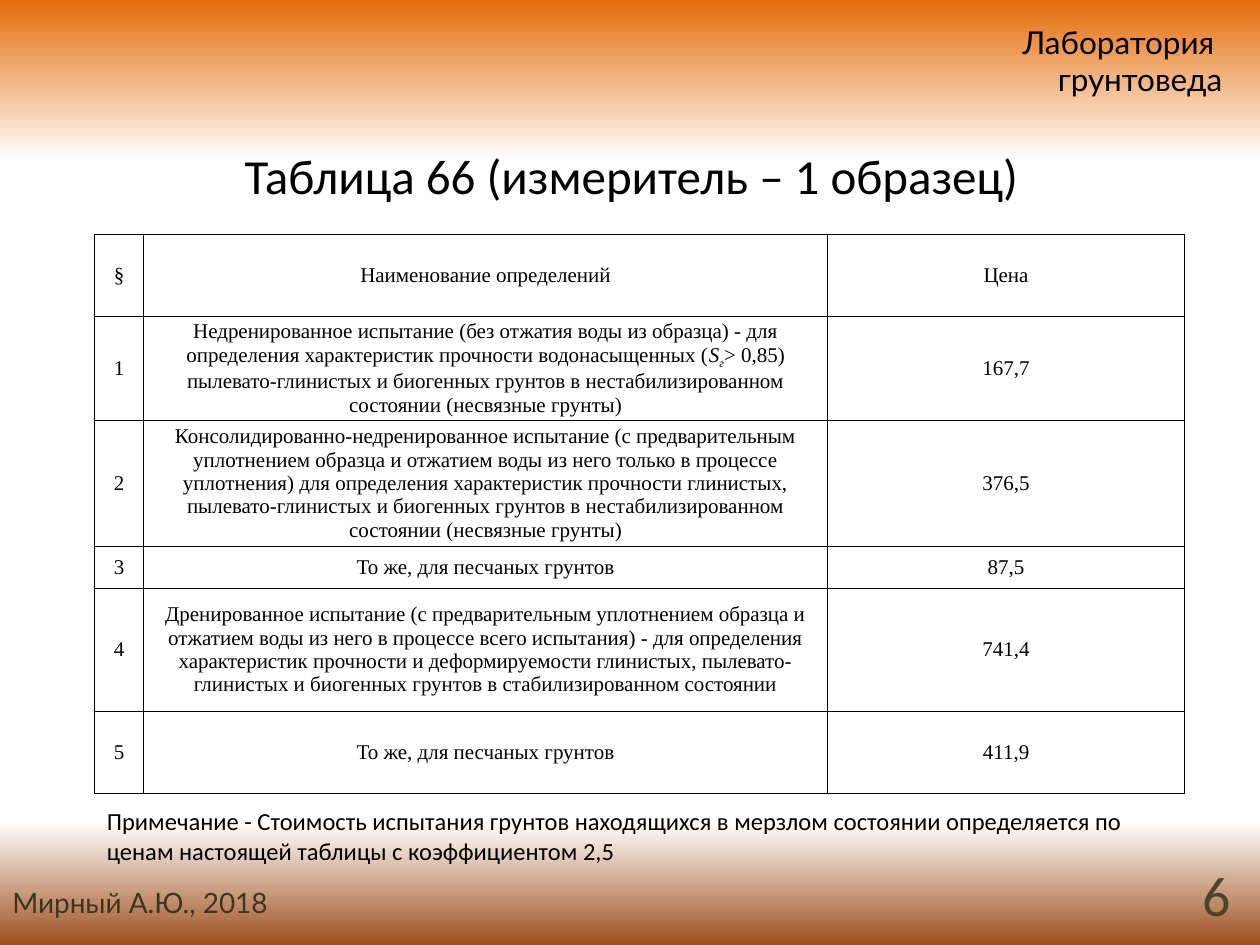
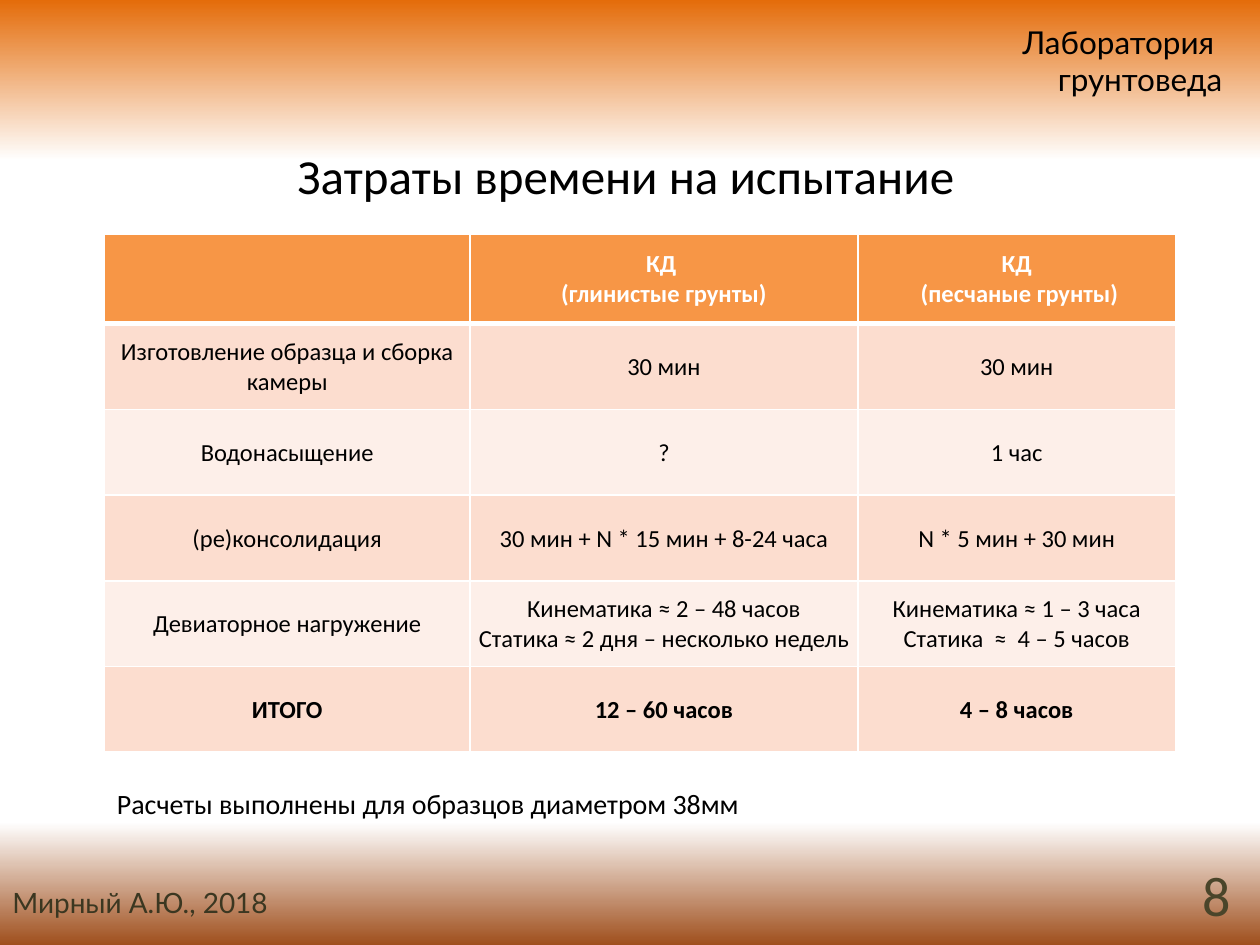
import pptx
import pptx.dml.color
import pptx.enum.text
import pptx.oxml
import pptx.oxml.ns
import pptx.util
from dataclasses import dataclass
from typing import NamedTuple

Inches = pptx.util.Inches
Pt = pptx.util.Pt
qn = pptx.oxml.ns.qn
ALIGN = pptx.enum.text.PP_ALIGN
ANCHOR = pptx.enum.text.MSO_ANCHOR

BLACK, WHITE = "000000", "FFFFFF"
ORANGE, PEACH, PALE_PEACH = "F79646", "FCDDCF", "FDEFE9"
FOOTER, PAGE_NUMBER = "3B3721", "4A452A"
# Position %, colour, opacity %
BACKDROP = [(0, "E46C0A", 77), (17, WHITE, 100), (87, WHITE, 100), (100, "9F4F1D", 50)]


class Run(NamedTuple):
    text: str
    italic: bool = False
    baseline: int = 0


class Box(NamedTuple):
    left: float
    top: float
    width: float
    height: float


@dataclass
class RowStyle:
    fill: str
    color: str = BLACK
    bold: bool = False
    bottom: float = 1
    margins: tuple = (0.01, 0.01, 0.01, 0)


@dataclass
class TableDesign:
    left: float
    columns: list
    heights: list
    font: str
    size: float
    border: str
    line: float
    styles: list


TITLE_BOX = Box(0.51, 1.07, 9, 0.63)
NUMBER_BOX = Box(7.54, 6.9, 2.33, 0.4)
AUTHOR_BOX = Box(0, 6.98, 2.99, 0.37)
HEADER_BOX = Box(6.26, 0.13, 3.54, 0.71)
TABLE_TOP = 1.86

PRICE_STYLE = RowStyle(WHITE, bottom=0.5, margins=(0.02, 0, 0.02, 0))
PRICE_DESIGN = TableDesign(
    0.75, [0.39, 5.43, 2.83], [0.65, 0.65, 0.98, 0.33, 0.98, 0.65],
    "Times New Roman", 12, BLACK, 0.5, [PRICE_STYLE] * 6)
PRICES = [
    ("§", "Наименование определений", "Цена"),
    ("1", [
        Run("Недренированное испытание (без отжатия воды из образца) - для определения "
            "характеристик прочности водонасыщенных ("),
        Run("S", italic=True),
        Run("г", italic=True, baseline=-25),
        Run("> 0,85) пылевато-глинистых и биогенных грунтов в нестабилизированном "
            "состоянии (несвязные грунты)"),
    ], "167,7"),
    ("2", "Консолидированно-недренированное испытание (с предварительным уплотнением "
          "образца и отжатием воды из него только в процессе уплотнения) для определения "
          "характеристик прочности глинистых, пылевато-глинистых и биогенных грунтов в "
          "нестабилизированном состоянии (несвязные грунты)", "376,5"),
    ("3", "То же, для песчаных грунтов", "87,5"),
    ("4", "Дренированное испытание (с предварительным уплотнением образца и отжатием воды "
          "из него в процессе всего испытания) - для определения характеристик прочности и "
          "деформируемости глинистых, пылевато-глинистых и биогенных грунтов в "
          "стабилизированном состоянии", "741,4"),
    ("5", "То же, для песчаных грунтов", "411,9"),
]

TIME_DESIGN = TableDesign(
    0.83, [2.9, 3.08, 2.52], [0.71] + [0.68] * 5, "Calibri", 14, WHITE, 1,
    [RowStyle(ORANGE, WHITE, True, 3, (0.1, 0.05, 0.1, 0.05)),
     RowStyle(PEACH), RowStyle(PALE_PEACH), RowStyle(PEACH), RowStyle(PALE_PEACH),
     RowStyle(PEACH, bold=True)])
TIMES = [
    ("", "КД \n(глинистые грунты)", "КД\n (песчаные грунты)"),
    ("Изготовление образца и сборка камеры", "30 мин", "30 мин"),
    ("Водонасыщение", "?", "1 час"),
    ("(ре)консолидация", "30 мин + N * 15 мин + 8-24 часа", "N * 5 мин + 30 мин"),
    ("Девиаторное нагружение",
     "Кинематика ≈ 2 – 48 часов\nСтатика ≈ 2 дня – несколько недель",
     "Кинематика ≈ 1 – 3 часа\nСтатика  ≈  4 – 5 часов"),
    ("ИТОГО", "12 – 60 часов", "4 – 8 часов"),
]


def rgb(color: str):
    return pptx.dml.color.RGBColor.from_string(color)


def write_text(tf, text, *, size: float, font: str = "Calibri", color: str = BLACK,
               bold: bool = False, align=ALIGN.LEFT) -> None:
    """Fill a text frame from a string (one paragraph a line) or a list of runs."""
    lines = [[Run(t)] for t in text.split("\n")] if isinstance(text, str) else [text]
    for i, runs in enumerate(lines):
        p = tf.add_paragraph() if i else tf.paragraphs[0]
        p.alignment = align
        for run in runs:
            r = p.add_run()
            r.text = run.text
            r.font.name = font
            r.font.size = Pt(size)
            r.font.bold = bold
            r.font.italic = run.italic
            r.font.color.rgb = rgb(color)
            if run.baseline:
                r._r.get_or_add_rPr().set("baseline", str(run.baseline * 1000))


def add_text(slide, box: Box, text: str, anchor=ANCHOR.TOP, **fmt) -> None:
    tf = slide.shapes.add_textbox(*map(Inches, box)).text_frame
    tf.word_wrap = True
    tf.vertical_anchor = anchor
    write_text(tf, text, **fmt)


def add_border(cell, side: str, color: str, width: float) -> None:
    ln = pptx.oxml.parse_xml(
        f'<a:{side} {pptx.oxml.ns.nsdecls("a")} w="{Pt(width)}"><a:solidFill>'
        f'<a:srgbClr val="{color}"/></a:solidFill></a:{side}>')
    cell._tc.get_or_add_tcPr().append(ln)


def add_table(slide, design: TableDesign, rows: list) -> None:
    box = Box(design.left, TABLE_TOP, sum(design.columns), sum(design.heights))
    table = slide.shapes.add_table(
        len(rows), len(design.columns), *map(Inches, box)).table
    table.horz_banding = table.first_row = False
    for column, width in zip(table.columns, design.columns):
        column.width = Inches(width)
    top_line = design.line
    for row, height, style, texts in zip(table.rows, design.heights, design.styles, rows):
        row.height = Inches(height)
        for cell, text in zip(row.cells, texts):
            for side, width in (("lnL", design.line), ("lnR", design.line),
                                ("lnT", top_line), ("lnB", style.bottom)):
                add_border(cell, side, design.border, width)
            cell.fill.solid()
            cell.fill.fore_color.rgb = rgb(style.fill)
            (cell.margin_left, cell.margin_top,
             cell.margin_right, cell.margin_bottom) = map(Inches, style.margins)
            cell.vertical_anchor = ANCHOR.MIDDLE
            if text:
                write_text(cell.text_frame, text, size=design.size, font=design.font,
                           color=style.color, bold=style.bold, align=ALIGN.CENTER)
        top_line = style.bottom


def set_backdrop(master) -> None:
    """Give every slide the vertical gradient of the top and bottom bands."""
    fill = master.background.fill
    fill.gradient()
    fill.gradient_angle = 270
    stops = master.element.find(".//" + qn("p:bg")).find(".//" + qn("a:gsLst"))
    for stop in list(stops):
        stops.remove(stop)
    for position, color, opacity in BACKDROP:
        stops.append(pptx.oxml.parse_xml(
            f'<a:gs {pptx.oxml.ns.nsdecls("a")} pos="{position * 1000}">'
            f'<a:srgbClr val="{color}"><a:alpha val="{opacity * 1000}"/></a:srgbClr></a:gs>'))


def add_slide(prs, title: str, number: int):
    slide = prs.slides.add_slide(prs.slide_layouts[6])
    add_text(slide, TITLE_BOX, title, ANCHOR.MIDDLE, size=28, align=ALIGN.CENTER)
    add_text(slide, NUMBER_BOX, str(number), ANCHOR.MIDDLE, size=32,
             color=PAGE_NUMBER, align=ALIGN.RIGHT)
    add_text(slide, AUTHOR_BOX, "Мирный А.Ю., 2018", size=16, font="Lato", color=FOOTER)
    add_text(slide, HEADER_BOX, "Лаборатория \nгрунтоведа", size=18, font="Lato",
             align=ALIGN.RIGHT)
    return slide


def main() -> None:
    prs = pptx.Presentation()
    prs.slide_width, prs.slide_height = Inches(10), Inches(7.5)
    set_backdrop(prs.slide_master)

    s = add_slide(prs, "Таблица 66 (измеритель – 1 образец)", 6)
    add_table(s, PRICE_DESIGN, PRICES)
    add_text(s, Box(0.75, 6.35, 8.66, 0.39),
             "Примечание - Стоимость испытания грунтов находящихся в мерзлом состоянии "
             "определяется по ценам настоящей таблицы с коэффициентом 2,5", size=14)

    s = add_slide(prs, "Затраты времени на испытание ", 8)
    add_table(s, TIME_DESIGN, TIMES)
    add_text(s, Box(0.83, 6.19, 7.48, 0.39),
             "Расчеты выполнены для образцов диаметром 38мм", size=16)
    prs.save("out.pptx")


if __name__ == "__main__":
    main()
